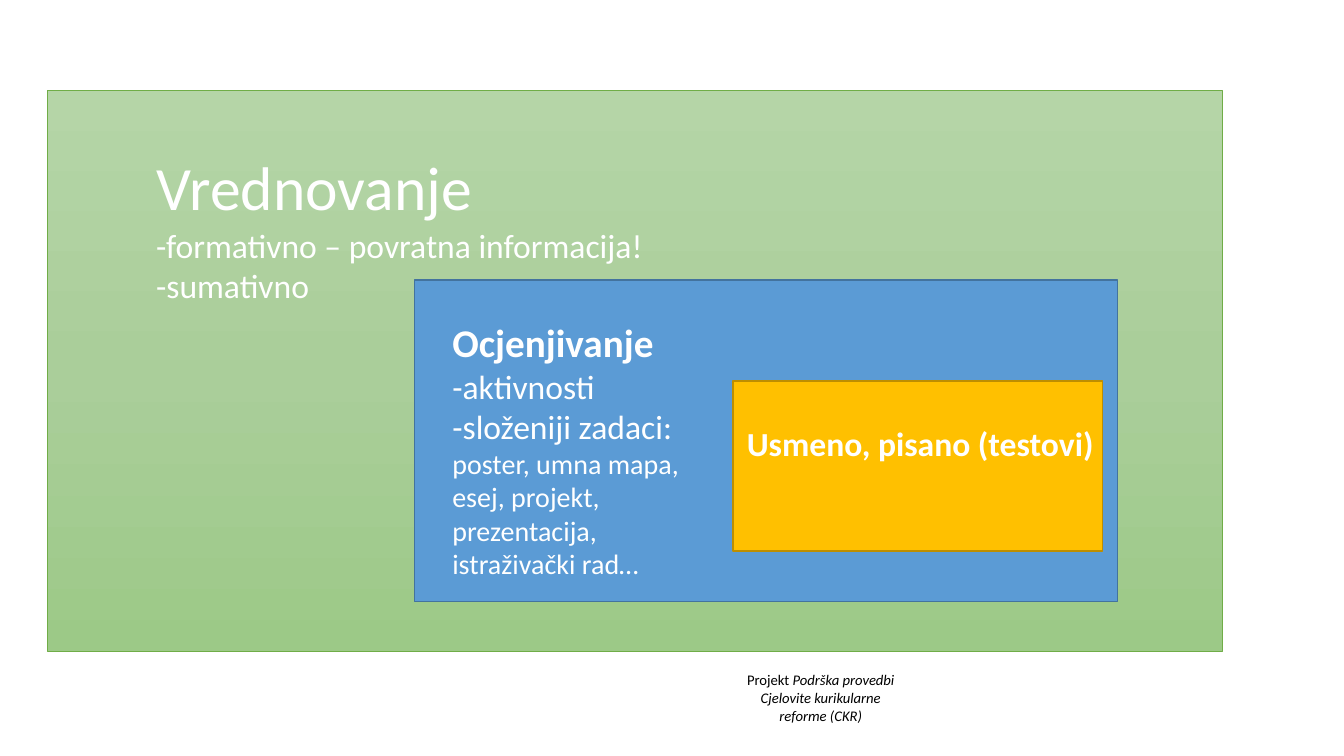
from copy import deepcopy
from pptx import Presentation
from pptx.dml.color import RGBColor
from pptx.enum.shapes import MSO_SHAPE
from pptx.enum.text import MSO_ANCHOR, MSO_AUTO_SIZE, PP_ALIGN
from pptx.oxml import parse_xml
from pptx.oxml.ns import nsdecls, qn
from pptx.util import Cm, Pt


def paint(color, value):
    color.rgb = RGBColor.from_string(value)


def write(shape, box, lines, hue="FFFFFF", align=PP_ALIGN.LEFT, wrap=True):
    """Place a text shape and fill it with (text, size, bold) lines."""
    shape.left, shape.top, shape.width, shape.height = map(Cm, box)
    frame = shape.text_frame
    frame.word_wrap = wrap
    frame.auto_size = MSO_AUTO_SIZE.NONE
    frame.vertical_anchor = MSO_ANCHOR.TOP
    frame.text = "\n".join(text for text, size, bold in lines)
    for para, (text, size, bold) in zip(frame.paragraphs, lines):
        para.alignment = align
        para.space_before = Pt(0)
        for run in para.runs:
            run.font.name = "Calibri"
            run.font.size = Pt(size)
            run.font.bold = bold
            paint(run.font.color, hue)
    return frame


deck = Presentation()
deck.slide_width, deck.slide_height = Cm(33.87), Cm(19.05)
slide = deck.slides.add_slide(deck.slide_layouts[1])
shapes = slide.shapes
title, body = slide.placeholders

# Nested panels: evaluation, grading, tests
panels = []
for box, fill, line, width in [
    ((1.19, 2.29, 29.62, 14.12), None, "70AD47", 0.5),
    ((10.44, 7.06, 17.73, 8.1), "5B9BD5", "43739E", 1),
    ((18.47, 9.6, 9.32, 4.29), "FFC000", "BD8E00", 1),
]:
    panel = shapes.add_shape(MSO_SHAPE.RECTANGLE, *map(Cm, box))
    panel.shadow.inherit = False
    if fill:
        panel.fill.solid()
        paint(panel.fill.fore_color, fill)
    paint(panel.line.color, line)
    panel.line.width = Pt(width)
    panels.append(panel)

# Green gradient, with the outer panel behind the placeholders
outer = panels[0]
outer.fill.gradient()
outer.fill.gradient_angle = 270
stops = outer._element.spPr.find(qn("a:gradFill")).find(qn("a:gsLst"))
stops.insert(1, deepcopy(stops[0]))
shades = [(0, "B5D5A7"), (0.5, "AACE9A"), (1, "9CC987")]
for stop, (place, shade) in zip(outer.fill.gradient_stops, shades):
    stop.position = place
    paint(stop.color, shade)
shapes._spTree.insert(2, outer._element)

# Title and its list
write(title, (3.68, 3.63, 14.78, 2.15), [("Vrednovanje", 44, False)])
points = write(body, (3.68, 5.53, 14.78, 2.29), [
    ("-formativno – povratna informacija!", 24, False),
    ("-sumativno", 24, False),
])
for para in points.paragraphs:
    props = para._p.get_or_add_pPr()
    props.set("marL", "0")
    props.set("indent", "0")
    props.append(parse_xml(f"<a:buNone {nsdecls('a')}/>"))

# Text on the inner panels
grade = shapes.add_textbox(0, 0, 0, 0)
write(grade, (11.15, 7.9, 6.45, 6.93), [
    ("Ocjenjivanje", 28, True),
    ("-aktivnosti", 24, False),
    ("-složeniji zadaci:", 24, False),
    ("poster, umna mapa, esej, projekt, prezentacija,", 20, False),
    ("istraživački rad…", 20, False),
])
tests = shapes.add_textbox(0, 0, 0, 0)
write(tests, (18.57, 10.54, 9.35, 1.27),
      [("Usmeno, pisano (testovi)", 24, True)], wrap=False)

# Project credit
credit = shapes.add_textbox(0, 0, 0, 0)
notice = write(credit, (17.75, 16.79, 5.87, 1.6), [
    ("Projekt ", 10.5, False),
    ("Cjelovite kurikularne\vreforme (CKR)", 10.5, False),
], "000000", PP_ALIGN.CENTER)
first, second = notice.paragraphs
name = first.add_run()
name.text = "Podrška provedbi"
name.font.name = "Calibri"
name.font.size = Pt(10.5)
paint(name.font.color, "000000")
for run in (name, *second.runs):
    run.font.italic = True

deck.save("out.pptx")
